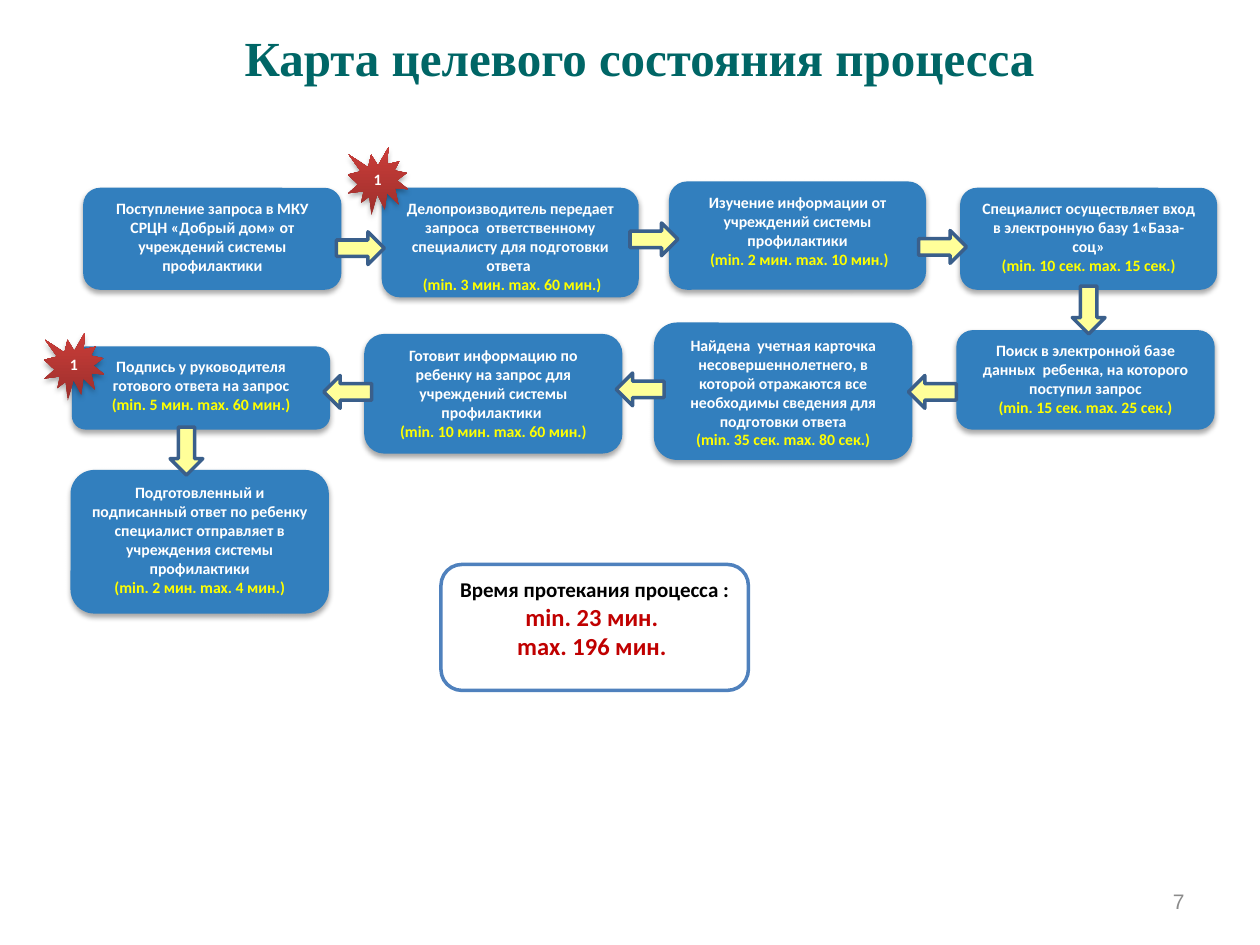
from lxml import etree
from pptx import Presentation
from pptx.dml.color import RGBColor
from pptx.enum.shapes import MSO_SHAPE
from pptx.enum.text import MSO_ANCHOR, PP_ALIGN
from pptx.oxml.ns import qn
from pptx.util import Pt

PX = 9144  # 100 px to the inch
BOX, ARROW, SEAL = (MSO_SHAPE.ROUNDED_RECTANGLE, MSO_SHAPE.RIGHT_ARROW,
                    MSO_SHAPE.EXPLOSION1)
CENTER, RIGHT = PP_ALIGN.CENTER, PP_ALIGN.RIGHT
TOP, MIDDLE = MSO_ANCHOR.TOP, MSO_ANCHOR.MIDDLE

WHITE = RGBColor(0xFF, 0xFF, 0xFF)
BLACK = RGBColor(0x00, 0x00, 0x00)
TEAL = RGBColor(0x00, 0x66, 0x66)
BLUE = RGBColor(0x32, 0x7F, 0xBE)
FRAME = RGBColor(0x4F, 0x81, 0xBD)
YELLOW = RGBColor(0xFF, 0xFF, 0x00)
CREAM = RGBColor(0xFF, 0xFF, 0x99)
NAVY = RGBColor(0x3A, 0x5F, 0x8B)
RED = RGBColor(0xC0, 0x00, 0x00)
SEAL_DARK = RGBColor(0x9C, 0x2F, 0x2C)
SEAL_LIGHT = RGBColor(0xCB, 0x3D, 0x39)
GREY = RGBColor(0x8B, 0x8B, 0x8B)

# Box (left, top, width, height), action, duration
STEPS = [
    ((66, 149, 205, 81),
     "Поступление запроса в МКУ СРЦН «Добрый дом» от учреждений системы профилактики", None),
    ((303, 149, 204, 87),
     "Делопроизводитель передает запроса  ответственному специалисту для подготовки ответа ",
     " (min. 3 мин. max. 60 мин.)"),
    ((531, 144, 204, 86),
     "Изучение информации от учреждений системы профилактики",
     " (min. 2 мин. max. 10 мин.)"),
    ((762, 149, 204, 81),
     "Специалист осуществляет вход в электронную базу 1«База-соц»",
     "(min. 10 сек. max. 15 сек.)"),
    ((759, 262, 205, 79),
     "Поиск в электронной базе данных  ребенка, на которого поступил запрос",
     "(min. 15 сек. max. 25 сек.)"),
    ((519, 256, 205, 109),
     "Найдена  учетная карточка несовершеннолетнего, в которой отражаются все "
     "необходимы сведения для подготовки ответа",
     "(min. 35 сек. max. 80 сек.)"),
    ((289, 265, 205, 95),
     "Готовит информацию по ребенку на запрос для учреждений системы профилактики ",
     "(min. 10 мин. max. 60 мин.)"),
    ((57, 275, 205, 66),
     "Подпись у руководителя готового ответа на запрос",
     "(min. 5 мин. max. 60 мин.)"),
    ((56, 373, 205, 114),
     "Подготовленный и подписанный ответ по ребенку специалист отправляет в "
     "учреждения системы профилактики",
     "(min. 2 мин. max. 4 мин.)"),
]
# Left, top, rotation
ARROWS = [(267, 184, 0), (500, 177, 0), (729, 183, 0), (845, 233, 90),
          (721, 298, 180), (489, 296, 180), (257, 298, 180), (129, 345, 90)]
SEALS = [(276, 117), (35, 264)]


def emu(box):
    return [v * PX for v in box]


def write(sp, lines, font="Calibri", bold=True, align=CENTER, anchor=TOP, inset_y=5):
    """Fill a shape with one paragraph per (text, size, colour)."""
    tf = sp.text_frame
    tf.word_wrap = True
    tf.vertical_anchor = anchor
    tf.margin_left = tf.margin_right = 10 * PX
    tf.margin_top = tf.margin_bottom = inset_y * PX
    for i, (text, size, color) in enumerate(lines):
        p = tf.add_paragraph() if i else tf.paragraphs[0]
        p.alignment = align
        r = p.add_run()
        r.text = text
        r.font.name, r.font.size, r.font.bold = font, Pt(size), bold
        r.font.color.rgb = color


def add_shape(slide, kind, box, fill=None, line=None):
    sp = slide.shapes.add_shape(kind, *emu(box))
    sp.shadow.inherit = False
    if fill is not None:
        sp.fill.solid()
        sp.fill.fore_color.rgb = fill
    if line is None:
        sp.line.fill.background()
    else:
        sp.line.color.rgb = line
        sp.line.width = Pt(2)
    return sp


def add_shadow(sp):
    effects = sp._element.spPr.find(qn("a:effectLst"))
    shadow = etree.SubElement(effects, qn("a:outerShdw"), blurRad=str(Pt(3.1)),
                              dist=str(Pt(1.8)), dir="5400000", rotWithShape="0")
    color = etree.SubElement(shadow, qn("a:srgbClr"), val="000000")
    etree.SubElement(color, qn("a:alpha"), val="35000")


def add_step(slide, box, action, duration):
    sp = add_shape(slide, BOX, box, BLUE)
    add_shadow(sp)
    lines = [(action, 9, WHITE)]
    if duration:
        lines.append((duration, 9, YELLOW))
    write(sp, lines)


def add_arrow(slide, left, top, rotation):
    sp = add_shape(slide, ARROW, (left, top, 38, 26), CREAM, NAVY)
    sp.rotation = rotation


def add_seal(slide, left, top):
    sp = add_shape(slide, SEAL, (left, top, 48, 54))
    sp.fill.gradient()
    sp.fill.gradient_angle = 90
    for stop, color in zip(sp.fill.gradient_stops, (SEAL_DARK, SEAL_LIGHT)):
        stop.color.rgb = color
    add_shadow(sp)
    write(sp, [("1", 9, WHITE)], anchor=MIDDLE, inset_y=10)


def add_total(slide, box):
    sp = add_shape(slide, BOX, box, WHITE, FRAME)
    write(sp, [("Время протекания процесса : ", 12, BLACK),
               ("min. 23 мин. ", 14, RED),
               ("max. 196 мин. ", 14, RED)])


def add_label(slide, box, line, **style):
    write(slide.shapes.add_textbox(*emu(box)), [line], **style)


def main():
    prs = Presentation()
    prs.slide_width, prs.slide_height = emu((1000, 750))
    slide = prs.slides.add_slide(prs.slide_layouts[6])
    add_label(slide, (161, 17, 693, 56), ("Карта целевого состояния процесса", 28, TEAL),
              font="Times New Roman")
    for step in STEPS:
        add_step(slide, *step)
    add_total(slide, (350, 448, 244, 100))
    for arrow in ARROWS:
        add_arrow(slide, *arrow)
    for seal in SEALS:
        add_seal(slide, *seal)
    add_label(slide, (717, 695, 233, 40), ("7", 12, GREY),
              font="Arial", bold=False, align=RIGHT, anchor=MIDDLE)
    prs.save("out.pptx")


if __name__ == "__main__":
    main()
